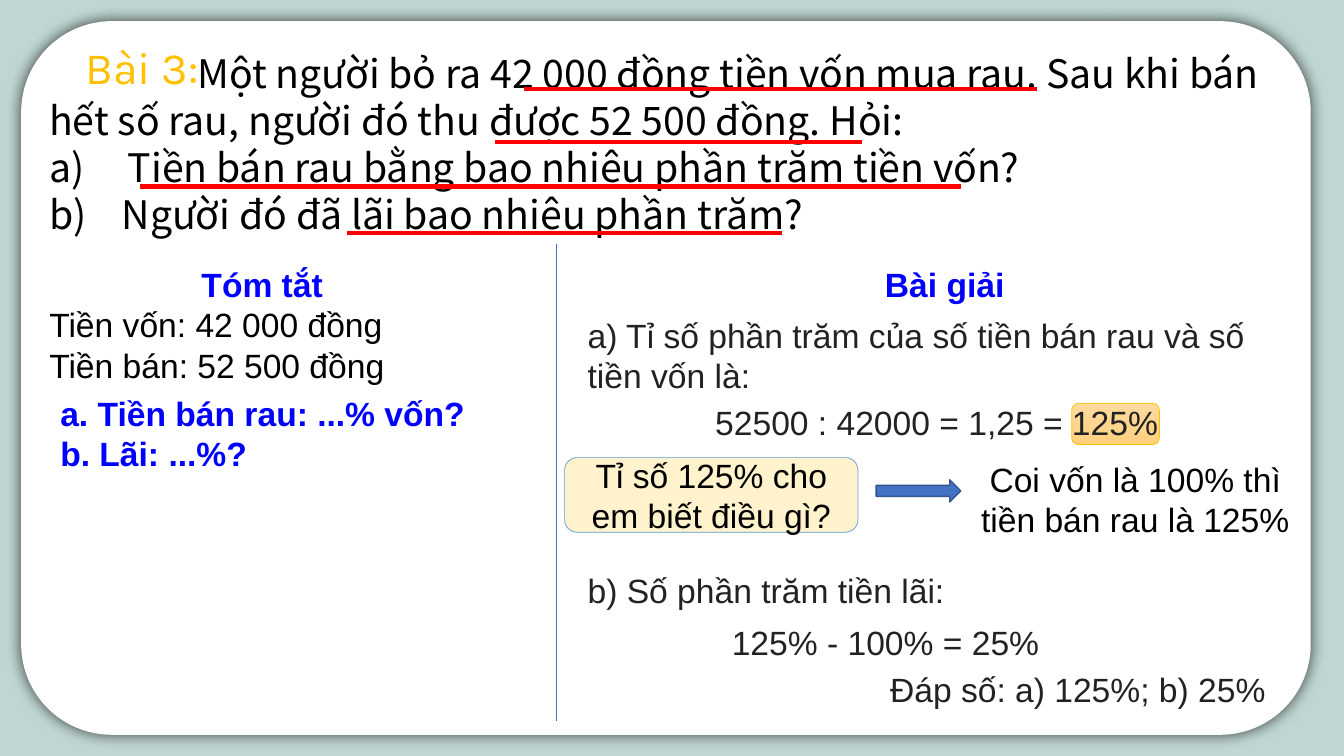
from copy import deepcopy

from lxml.etree import SubElement
from pptx import Presentation
from pptx.dml.color import RGBColor
from pptx.enum.shapes import MSO_CONNECTOR, MSO_SHAPE
from pptx.enum.text import MSO_ANCHOR, PP_ALIGN
from pptx.oxml.ns import qn
from pptx.util import Inches, Pt

COLORS = {
    "background": "BFD6D2", "panel": "FFFFFF", "gold": "FFC000", "black": "000000",
    "heading": "0000FF", "solution": "222222", "divider": "4472C4", "arrow_edge": "325491",
    "underline": "FF0000", "question": "FFF2CC", "question_edge": "5B9BD5",
}
HIGHLIGHT = [(0, "FFDB9E"), (0.5, "FFD590"), (1, "FFD07C")]
LEFT, CENTER, RIGHT = PP_ALIGN.LEFT, PP_ALIGN.CENTER, PP_ALIGN.RIGHT


class LessonSlide:
    """Holds the style and the current slide."""

    def __init__(self, slide, font="Arial", size=24):
        self.slide, self.font, self.size = slide, font, size
        slide.background.fill.solid()
        slide.background.fill.fore_color.rgb = self.color("background")

    def color(self, name):
        return RGBColor.from_string(COLORS[name])

    def fill_text(self, frame, lines, color, align=LEFT, bold=False, font=None, size=None):
        frame.word_wrap = True
        frame.text = "\n".join(lines)
        for paragraph in frame.paragraphs:
            paragraph.alignment = align
            for span in paragraph.runs:
                span.font.name = font or self.font
                span.font.size = Pt(size or self.size)
                span.font.bold = bold
                span.font.color.rgb = self.color(color)
                for tag in ("a:ea", "a:cs"):
                    SubElement(span.font._element, qn(tag), typeface=font or self.font)

    def text(self, place, lines, color, **style):
        box = self.slide.shapes.add_textbox(*map(Inches, place))
        self.fill_text(box.text_frame, lines, color, **style)
        return box

    def shape(self, kind, place, fill=None, edge=None, width=0.5, lines=()):
        shape = self.slide.shapes.add_shape(kind, *map(Inches, place))
        shape.shadow.inherit = False
        if fill:
            shape.fill.solid()
            shape.fill.fore_color.rgb = self.color(fill)
        else:
            shape.fill.background()
        if edge:
            shape.line.color.rgb = self.color(edge)
            shape.line.width = Pt(width)
        else:
            shape.line.fill.background()
        if lines:
            shape.text_frame.vertical_anchor = MSO_ANCHOR.MIDDLE
            self.fill_text(shape.text_frame, lines, "black", align=CENTER)
        return shape

    def line(self, start, end, color, width):
        line = self.slide.shapes.add_connector(
            MSO_CONNECTOR.STRAIGHT, *map(Inches, (*start, *end)))
        line.line.color.rgb = self.color(color)
        line.line.width = Pt(width)
        SubElement(line._element.spPr, qn("a:effectLst"))

    def glow(self, shape, blur, alpha):
        effects = shape._element.spPr.find(qn("a:effectLst"))
        shadow = SubElement(effects, qn("a:outerShdw"), blurRad=str(Pt(blur)),
                            dist="0", dir="0", algn="ctr", rotWithShape="0")
        tint = SubElement(shadow, qn("a:srgbClr"), val=COLORS["black"])
        SubElement(tint, qn("a:alpha"), val=str(alpha * 1000))

    def gradient(self, shape, stops):
        shape.fill.gradient()
        shape.fill.gradient_angle = 270
        stop_list = shape._element.spPr.find(".//" + qn("a:gsLst"))
        stop_list.append(deepcopy(stop_list[0]))
        for stop, (position, value) in zip(shape.fill.gradient_stops, stops):
            stop.position = position
            stop.color.rgb = RGBColor.from_string(value)

    def indent(self, paragraph, margin, first):
        properties = paragraph._p.get_or_add_pPr()
        properties.set("marL", str(Inches(margin)))
        properties.set("indent", str(Inches(first)))


def main():
    deck = Presentation()
    deck.slide_width, deck.slide_height = Inches(13.33), Inches(7.5)
    page = LessonSlide(deck.slides.add_slide(deck.slide_layouts[6]))

    # Panel and highlighted result
    panel = page.shape(MSO_SHAPE.ROUNDED_RECTANGLE, (0.21, 0.21, 12.79, 7.08), "panel")
    panel.adjustments[0] = 0.127
    page.glow(panel, blur=10, alpha=70)
    result = page.shape(MSO_SHAPE.ROUNDED_RECTANGLE, (10.63, 4, 0.87, 0.41), edge="gold")
    page.gradient(result, HIGHLIGHT)

    # Problem statement
    page.text((0.75, 0.34, 1.5, 0.64), ["Bài 3:"], "gold", font="Karla", size=32)
    problem = page.text((0.39, 0.44, 12.2, 1.99), [
        "Một người bỏ ra 42 000 đồng tiền vốn mua rau. Sau khi bán hết số rau, "
        "người đó thu được 52 500 đồng. Hỏi:",
        "a)\tTiền bán rau bằng bao nhiêu phần trăm tiền vốn?",
        "b)\tNgười đó đã lãi bao nhiêu phần trăm?",
    ], "black", font="Noto Sans CJK SC", size=28)
    indents = [(0, 1.47), (0.78, -0.78), (0.72, -0.72)]
    for paragraph, (margin, first) in zip(problem.text_frame.paragraphs, indents):
        page.indent(paragraph, margin, first)
        paragraph.line_spacing = Pt(33.6)

    # Summary
    page.text((0.39, 2.57, 4.42, 0.5), ["Tóm tắt"], "heading", align=CENTER, bold=True)
    page.text((0.39, 2.97, 4.42, 0.9),
              ["Tiền vốn: 42 000 đồng", "Tiền bán: 52 500 đồng"], "black")
    page.text((0.5, 3.85, 4.42, 1.31),
              ["a. Tiền bán rau: ...% vốn?", "b. Lãi: ...%?"], "heading", bold=True)
    page.line((5.52, 2.42), (5.52, 7.15), "divider", 0.5)

    # Solution
    page.text((7.16, 2.57, 4.42, 0.5), ["Bài giải"], "heading", align=CENTER, bold=True)
    for left, top, height, align, line in [
        (5.73, 3.07, 0.91, LEFT, "a) Tỉ số phần trăm của số tiền bán rau và số tiền vốn là:"),
        (5.73, 3.94, 0.5, CENTER, "52500 : 42000 = 1,25 = 125%"),
        (5.73, 5.6, 0.5, LEFT, "b) Số phần trăm tiền lãi:"),
        (7.16, 6.12, 0.5, LEFT, "125% - 100% = 25%"),
        (5.53, 6.59, 0.5, RIGHT, "Đáp số: a) 125%; b) 25%"),
    ]:
        page.text((left, top, 7.12, height), [line], "solution", align=align)

    # Question, arrow and answer
    page.shape(MSO_SHAPE.ROUNDED_RECTANGLE, (5.6, 4.54, 2.91, 0.74), "question",
               "question_edge", lines=["Tỉ số 125% cho em biết điều gì?"])
    page.shape(MSO_SHAPE.ROUNDED_RECTANGLE, (9.51, 4.58, 3.5, 0.74),
               lines=["Coi vốn là 100% thì tiền bán rau là 125%"])
    page.shape(MSO_SHAPE.RIGHT_ARROW, (8.69, 4.76, 0.84, 0.22), "divider", "arrow_edge", 1)

    # Underlines of the key facts
    for left, right, top in [(5.2, 10.29, 0.88), (4.91, 8.55, 1.41),
                             (1.39, 9.53, 1.85), (3.44, 7.76, 2.31)]:
        page.line((left, top), (right, top), "underline", 3)

    deck.save("out.pptx")


if __name__ == "__main__":
    main()
